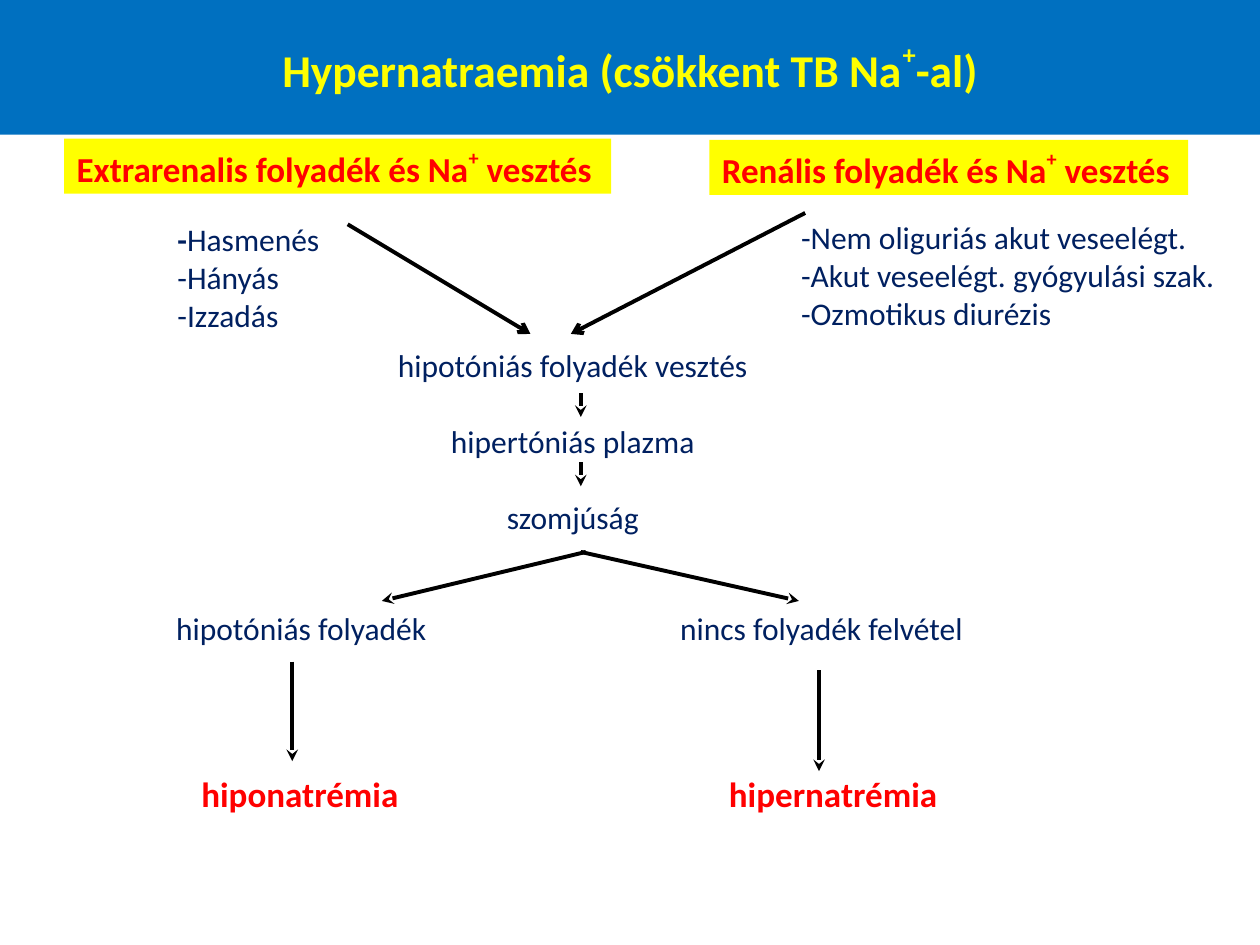
from lxml.etree import SubElement
from pptx import Presentation
from pptx.dml.color import RGBColor
from pptx.enum.shapes import MSO_CONNECTOR, MSO_SHAPE
from pptx.enum.text import MSO_ANCHOR, PP_ALIGN as ALIGN
from pptx.oxml.ns import qn
from pptx.util import Pt

BLUE, YELLOW, RED, NAVY, BLACK = "0070C0", "FFFF00", "FF0000", "002060", "000000"


def color(hex_text):
    return RGBColor.from_string(hex_text)


def style(para, size, hex_text, bold=False):
    for span in para.runs:
        span.font.name = "Calibri"
        span.font.size = Pt(size)
        span.font.bold = bold
        span.font.color.rgb = color(hex_text)


deck = Presentation()
deck.slide_width, deck.slide_height = Pt(720), Pt(540)
page = deck.slides.add_slide(deck.slide_layouts[6])

# Title band and the two headings, each with a raised plus sign
bands = [
    ("Hypernatraemia (csökkent TB Na+-al)", 0, 0, 720, 77, BLUE, YELLOW, 26, ALIGN.CENTER),
    ("Extrarenalis folyadék és Na+ vesztés", 36.7, 79.2, 312.5, 31.5, YELLOW, RED, 20, ALIGN.LEFT),
    ("Renális folyadék és Na+ vesztés", 405.4, 79.9, 273.6, 31.5, YELLOW, RED, 20, ALIGN.LEFT),
]
for text, left, top, width, height, fill, ink, size, align in bands:
    band = page.shapes.add_shape(MSO_SHAPE.RECTANGLE, Pt(left), Pt(top), Pt(width), Pt(height))
    band.shadow.inherit = False
    band.fill.solid()
    band.fill.fore_color.rgb = color(fill)
    band.line.fill.background()
    band.text_frame.word_wrap = align == ALIGN.CENTER
    band.text_frame.vertical_anchor = MSO_ANCHOR.MIDDLE if align == ALIGN.CENTER else MSO_ANCHOR.TOP
    para = band.text_frame.paragraphs[0]
    para.alignment = align
    for part in text.partition("+"):
        para.add_run().text = part
    style(para, size, ink, bold=True)
    para.runs[1].font._element.set("baseline", "50000")

# Cause lists and the central chain
columns = [
    ("-Nem oliguriás akut veseelégt.\n-Akut veseelégt. gyógyulási szak.\n-Ozmotikus diurézis",
     450.7, 121.3, 255, 73, ALIGN.LEFT, 0),
    ("-Hasmenés\n-Hányás\n-Izzadás", 94.3, 122.2, 96.5, 73, ALIGN.LEFT, 0),
    ("hipotóniás folyadék vesztés\nhipertóniás plazma\nszomjúság",
     203.8, 194.4, 247, 115.2, ALIGN.CENTER, 21.6),
]
for text, left, top, width, height, align, gap in columns:
    box = page.shapes.add_textbox(Pt(left), Pt(top), Pt(width), Pt(height))
    box.text_frame.word_wrap = True
    box.text_frame.text = text
    for index, para in enumerate(box.text_frame.paragraphs):
        para.alignment = align
        if index and gap:
            para.space_before = Pt(gap)
        style(para, 18, NAVY)
        if para.text == "-Hasmenés":
            para.runs[0].text = "-"
            para.add_run().text = "Hasmenés"
            style(para, 18, NAVY)
            para.runs[0].font.bold = True

# Two-column outcome rows, aligned by a tab stop
rows = [
    ("hipotóniás folyadék\tnincs folyadék felvétel", 93.6, 344.2, 584, 29, 288, 18, NAVY, False),
    ("hiponatrémia\thipernatrémia", 108, 437.8, 439.2, 31.5, 301.5, 20, RED, True),
]
for text, left, top, width, height, stop, size, ink, bold in rows:
    box = page.shapes.add_textbox(Pt(left), Pt(top), Pt(width), Pt(height))
    box.text_frame.word_wrap = True
    para = box.text_frame.paragraphs[0]
    tabs = SubElement(para._p.get_or_add_pPr(), qn("a:tabLst"))
    SubElement(tabs, qn("a:tab"), pos=str(Pt(stop)), algn="l")
    para.text = text
    style(para, size, ink, bold)

arrows = [
    (334.8, 315.4, 218.2, 343.4, "stealth"),
    (331.9, 315.4, 456.5, 343.4, "stealth"),
    (198.7, 128.2, 303.1, 190.8, "arrow"),
    (167, 378, 167, 434.9, "stealth"),
    (468, 383, 468, 440.6, "stealth"),
    (331.9, 264.2, 331.9, 277.9, "stealth"),
    (331.9, 224.6, 331.9, 238.3, "stealth"),
    (460.1, 121.7, 326.2, 190.8, "arrow"),
]
for x1, y1, x2, y2, head in arrows:
    arrow = page.shapes.add_connector(MSO_CONNECTOR.STRAIGHT, Pt(x1), Pt(y1), Pt(x2), Pt(y2))
    arrow.line.width = Pt(2.25)
    arrow.line.color.rgb = color(BLACK)
    SubElement(arrow.line._get_or_add_ln(), qn("a:tailEnd"), type=head)
    SubElement(arrow._element.spPr, qn("a:effectLst"))

deck.save("out.pptx")
